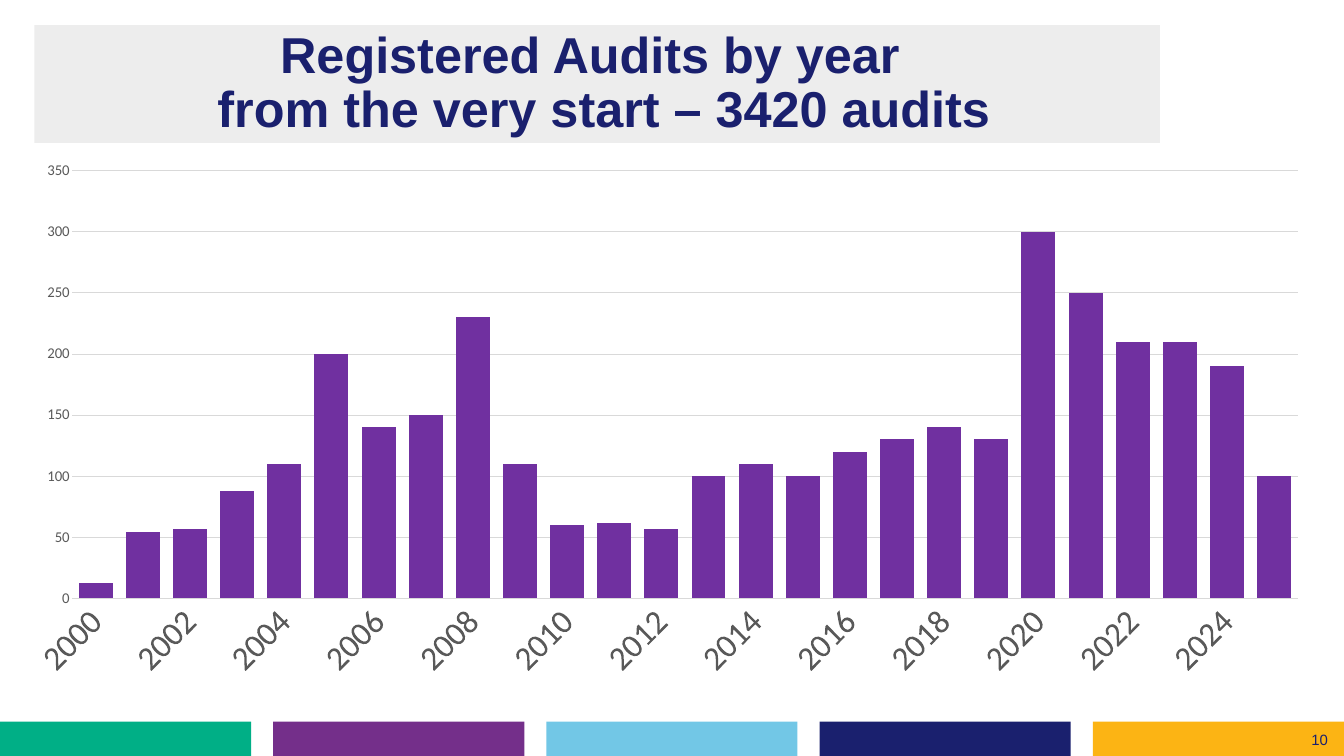
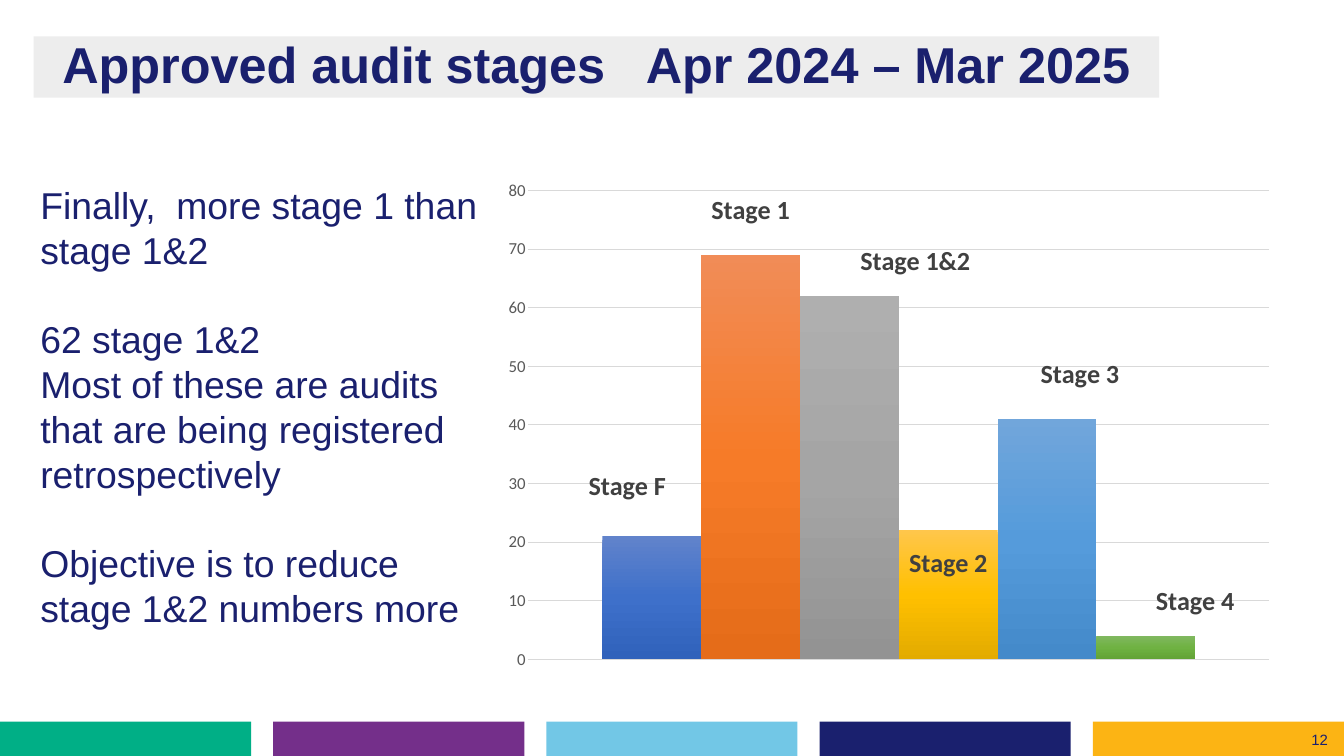
from copy import deepcopy

from pptx import Presentation
from pptx.chart.data import CategoryChartData
from pptx.dml.color import RGBColor
from pptx.enum.chart import XL_CHART_TYPE, XL_LABEL_POSITION, XL_TICK_MARK
from pptx.enum.shapes import MSO_SHAPE
from pptx.enum.text import MSO_ANCHOR, MSO_AUTO_SIZE, PP_ALIGN
from pptx.oxml import parse_xml
from pptx.oxml.ns import nsdecls, qn
from pptx.util import Pt

NAVY = RGBColor(0x1A, 0x20, 0x6E)
TITLE_GREY = RGBColor(0xED, 0xED, 0xED)
GRID_GREY = RGBColor(0xD9, 0xD9, 0xD9)
AXIS_GREY = RGBColor(0x59, 0x59, 0x59)
LABEL_GREY = RGBColor(0x40, 0x40, 0x40)
BLACK = RGBColor(0x00, 0x00, 0x00)
AUDIT_PURPLE = RGBColor(0x70, 0x30, 0xA0)
BAND_COLORS = [
    RGBColor(0x00, 0xAF, 0x86),
    RGBColor(0x74, 0x2F, 0x8A),
    RGBColor(0x72, 0xC7, 0xE6),
    NAVY,
    RGBColor(0xFC, 0xB4, 0x14),
]

AUDITS = [13, 54, 57, 88, 110, 200, 140, 150, 230, 110, 60, 62, 57,
          100, 110, 100, 120, 130, 140, 130, 300, 250, 210, 210, 190, 100]

STAGES = [
    ("Stage F", 21, ("6183CB", "3E70CA", "3062BB"), (-0.03, -0.06)),
    ("Stage 1", 69, ("F18C57", "F67B28", "E56C19"), (0, -0.05)),
    ("Stage 1&2", 62, ("AFAFAF", "A5A5A5", "939393"), (0.08, -0.03)),
    ("Stage 2", 22, ("FFC64B", "FFC000", "E3AB00"), (0, 0.1)),
    ("Stage 3", 41, ("71A6DB", "559BDB", "448ACA"), (0.04, -0.05)),
    ("Stage 4", 4, ("81B861", "6FB242", "62A336"), (0.06, -0.03)),
]

STAGE_NOTES = [
    ("Finally,  more stage 1 than stage 1&2", 0),
    ("62 stage 1&2", 48),
    ("Most of these are audits that are being registered retrospectively", 0),
    ("Objective is to reduce stage 1&2 numbers more", 48),
]


def manual_layout(modes, **values):
    parts = "".join(f'<c:{mode} val="{value}"/>' for mode, value in modes.items())
    parts += "".join(f'<c:{name} val="{value}"/>' for name, value in values.items())
    return parse_xml(
        f'<c:layout {nsdecls("c")}><c:manualLayout>{parts}</c:manualLayout></c:layout>'
    )


class Deck:
    TITLE_ONLY, TITLE_AND_BODY = 5, 1
    TEXT_FONT, CHART_FONT = "Arial", "Calibri"

    def __init__(self):
        self.presentation = Presentation()
        self.presentation.slide_width = Pt(1440)
        self.presentation.slide_height = Pt(810)
        self.slide = None

    def style(self, font, size, color=NAVY, bold=False, name=TEXT_FONT):
        font.name, font.size, font.bold = name, Pt(size), bold
        font.color.rgb = color

    def place(self, shape, left, top, width, height):
        shape.left, shape.top = Pt(left), Pt(top)
        shape.width, shape.height = Pt(width), Pt(height)

    def add_slide(self, layout, number):
        first = self.slide is None
        self.slide = self.presentation.slides.add_slide(
            self.presentation.slide_layouts[layout])
        if first:
            self.add_bands()
        self.add_number(number)

    def add_bands(self):
        master_tree = self.presentation.slide_master.shapes.element
        for index, color in enumerate(BAND_COLORS):
            band = self.slide.shapes.add_shape(
                MSO_SHAPE.RECTANGLE, Pt(292.75 * index), Pt(773.3), Pt(269), Pt(36.7))
            band.shadow.inherit = False
            band.fill.solid()
            band.fill.fore_color.rgb = color
            band.line.fill.background()
            band.name = f"Band {index + 1}"
            band.element.nvSpPr.cNvPr.set("id", str(101 + index))
            master_tree.append(band.element)

    def add_number(self, number):
        box = self.slide.shapes.add_textbox(Pt(1398), Pt(779), Pt(39), Pt(27))
        frame = box.text_frame
        frame.word_wrap = True
        frame.vertical_anchor = MSO_ANCHOR.MIDDLE
        frame.text = str(number)
        self.style(frame.paragraphs[0].font, 16)

    def add_title(self, pieces, left, top, height, gap=0):
        title = self.slide.shapes.title
        self.place(title, left, top, 1206, height)
        title.fill.solid()
        title.fill.fore_color.rgb = TITLE_GREY
        frame = title.text_frame
        frame.auto_size = MSO_AUTO_SIZE.NONE
        frame.vertical_anchor = MSO_ANCHOR.MIDDLE
        paragraph = frame.paragraphs[0]
        paragraph.text = pieces[0]
        for piece in pieces[1:]:
            paragraph.add_run().text = " "
            paragraph.add_run().text = piece
        paragraph.alignment = PP_ALIGN.CENTER
        paragraph.line_spacing = 0.9
        for run in paragraph.runs:
            self.style(run.font, 54, bold=True)
            if run.text == " ":
                run._r.get_or_add_rPr().set("spc", str(gap * 100))

    def add_body(self, notes, left, top, width, height):
        body = self.slide.placeholders[1]
        self.place(body, left, top, width, height)
        frame = body.text_frame
        frame.auto_size = MSO_AUTO_SIZE.NONE
        frame.vertical_anchor = MSO_ANCHOR.MIDDLE
        frame.text = "\n".join(text for text, _ in notes)
        for paragraph, (_, space_before) in zip(frame.paragraphs, notes):
            properties = paragraph._p.get_or_add_pPr()
            properties.set("marL", "0")
            properties.set("indent", "0")
            properties.append(parse_xml(f'<a:buNone {nsdecls("a")}/>'))
            paragraph.line_spacing = Pt(48)
            paragraph.space_before = Pt(space_before)
            for run in paragraph.runs:
                self.style(run.font, 40)

    def add_column_chart(self, data, frame, plot_area, gap, maximum, step, axis_size):
        chart = self.slide.shapes.add_chart(
            XL_CHART_TYPE.COLUMN_CLUSTERED, *map(Pt, frame), data).chart
        self.style(chart.font, 10, BLACK, name=self.CHART_FONT)
        chart.has_title = chart.has_legend = False
        plot = chart.plots[0]
        plot.gap_width, plot.overlap, plot.vary_by_categories = gap, 0, False

        area = next(chart.element.iter(qn("c:plotArea")))
        for automatic in area.findall(qn("c:layout")):
            area.remove(automatic)
        modes = {"layoutTarget": "inner", "xMode": "edge", "yMode": "edge"}
        area.insert(0, manual_layout(modes, **dict(zip("xywh", plot_area))))

        axis = chart.value_axis
        axis.minimum_scale, axis.maximum_scale, axis.major_unit = 0, maximum, step
        axis.has_major_gridlines = True
        axis.major_gridlines.format.line.color.rgb = GRID_GREY
        axis.major_gridlines.format.line.width = Pt(0.75)
        self.style_axis(axis, axis_size)
        return chart

    def style_axis(self, axis, size):
        axis.major_tick_mark = axis.minor_tick_mark = XL_TICK_MARK.NONE
        axis.format.line.fill.background()
        self.style(axis.tick_labels.font, size, AXIS_GREY, name=self.CHART_FONT)

    def slant_categories(self, axis, size):
        self.style_axis(axis, size)
        next(axis._element.iter(qn("a:bodyPr"))).set("rot", "-2700000")

    def shade_series(self, series, colors):
        fill = series.format.fill
        fill.gradient()
        fill.gradient_angle = 270
        stops = next(series._element.iter(qn("a:gsLst")))
        stops.append(deepcopy(stops[0]))
        for stop, position, color in zip(fill.gradient_stops, (0, 0.5, 1), colors):
            stop.position = position
            stop.color.rgb = RGBColor.from_string(color)

    def label_series(self, series, offset):
        label = series.points[0].data_label
        label.position = XL_LABEL_POSITION.OUTSIDE_END
        self.style(label.font, 28, LABEL_GREY, True, self.CHART_FONT)
        element = next(series._element.iter(qn("c:dLbl")))
        element.find(qn("c:showVal")).set("val", "0")
        element.find(qn("c:showSerName")).set("val", "1")
        next(element.iter(qn("a:bodyPr"))).set("wrap", "none")
        element.insert(1, manual_layout({}, x=offset[0], y=offset[1]))
        for leader_lines in series._element.iter(qn("c:showLeaderLines")):
            leader_lines.set("val", "0")


def add_audits_by_year(deck):
    deck.add_slide(Deck.TITLE_ONLY, 10)
    deck.add_title(
        ["Registered Audits by year \v from the very start – 3420 audits"], 36.7, 27, 126)
    data = CategoryChartData()
    data.categories = [str(year) for year in range(2000, 2026)]
    data.add_series("Series 1", AUDITS)
    chart = deck.add_column_chart(
        data, (36, 165, 1368, 588), (0.02, 0.03, 0.97, 0.78), 39, 350, 50, 16)
    deck.slant_categories(chart.category_axis, 36)
    fill = chart.plots[0].series[0].format.fill
    fill.solid()
    fill.fore_color.rgb = AUDIT_PURPLE


def add_approved_stages(deck):
    deck.add_slide(Deck.TITLE_AND_BODY, 12)
    deck.add_title(["Approved audit stages", "Apr 2024 – Mar 2025"], 36, 39, 65.5, gap=28)
    deck.add_body(STAGE_NOTES, 36, 111, 498, 648)
    data = CategoryChartData()
    data.categories = ["1"]
    for name, count, _, _ in STAGES:
        data.add_series(name, [count])
    chart = deck.add_column_chart(
        data, (522, 165, 882, 558), (0.05, 0.07, 0.9, 0.9), 150, 80, 10, 18)
    chart.category_axis.visible = False
    for series, (_, _, colors, offset) in zip(chart.plots[0].series, STAGES):
        deck.shade_series(series, colors)
        deck.label_series(series, offset)


def main():
    deck = Deck()
    add_audits_by_year(deck)
    add_approved_stages(deck)
    deck.presentation.save("out.pptx")


if __name__ == "__main__":
    main()
